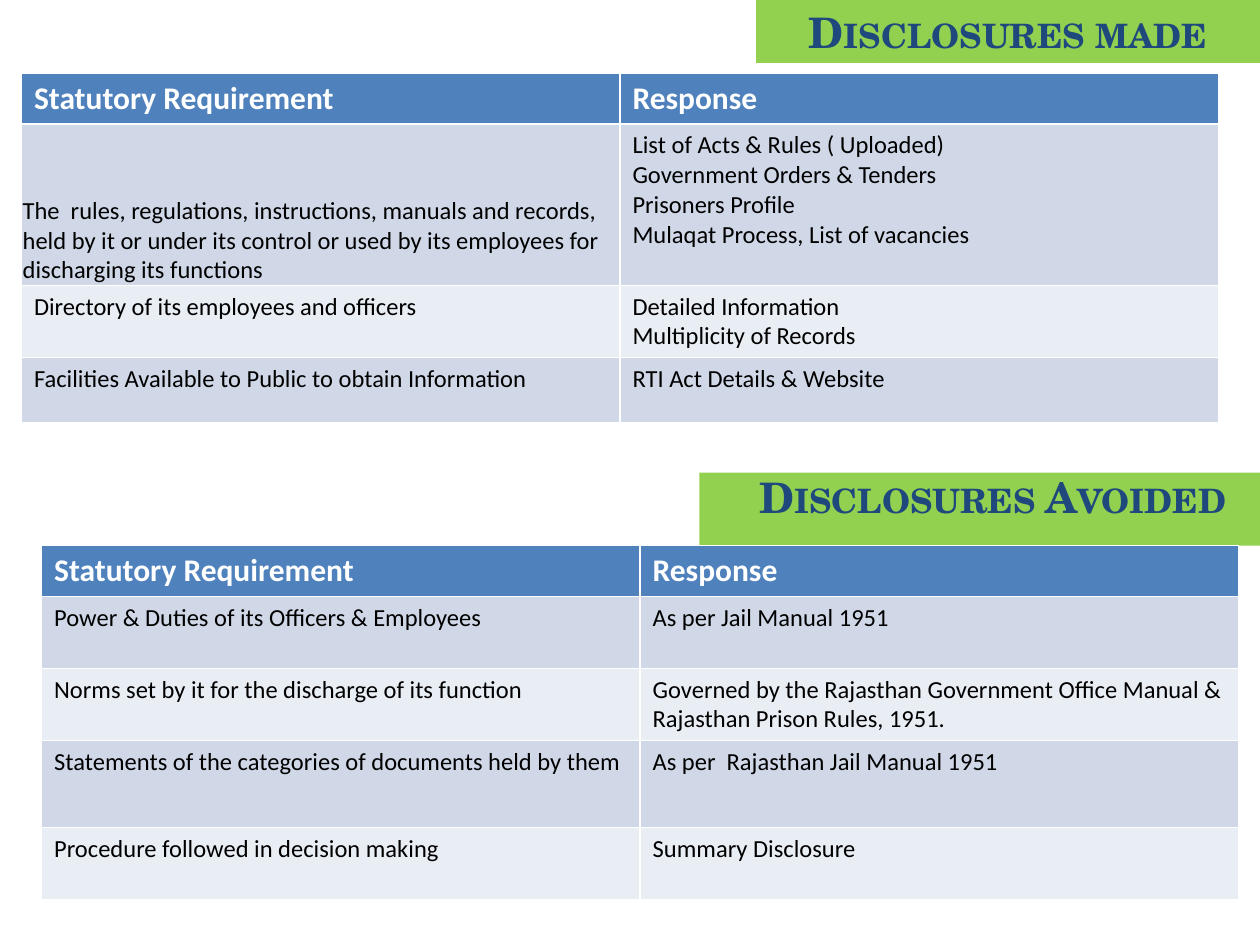
from pptx import Presentation
from pptx.dml.color import RGBColor
from pptx.enum.shapes import MSO_SHAPE
from pptx.enum.text import MSO_ANCHOR, PP_ALIGN
from pptx.oxml.ns import qn
from pptx.util import Inches, Pt

RECTANGLE = MSO_SHAPE.RECTANGLE
MIDDLE, BOTTOM = MSO_ANCHOR.MIDDLE, MSO_ANCHOR.BOTTOM
CENTER = PP_ALIGN.CENTER

GREEN = RGBColor(0x92, 0xD0, 0x50)
NAVY = RGBColor(0x1F, 0x49, 0x7D)
BLUE = RGBColor(0x4F, 0x81, 0xBD)
WHITE = RGBColor(0xFF, 0xFF, 0xFF)
BLACK = RGBColor(0x00, 0x00, 0x00)
BANDS = (RGBColor(0xD0, 0xD8, 0xE8), RGBColor(0xE9, 0xED, 0xF4))

HEADING_FONT, TABLE_FONT = "TeX Gyre Schola", "Calibri"
SLIDE_WIDTH, SLIDE_HEIGHT = 10, 7.5
TABLE_WIDTH = 0.95 * SLIDE_WIDTH
HEADER = ("Statutory Requirement", "Response")

MADE = [
    ("The  rules, regulations, instructions, manuals and records, held by it or "
     "under its control or used by its employees for discharging its functions",
     "List of Acts & Rules ( Uploaded)\nGovernment Orders & Tenders\n"
     "Prisoners Profile\nMulaqat Process, List of vacancies"),
    ("Directory of its employees and officers",
     "Detailed Information\nMultiplicity of Records"),
    ("Facilities Available to Public to obtain Information",
     "RTI Act Details & Website"),
]
AVOIDED = [
    ("Power & Duties of its Officers & Employees", "As per Jail Manual 1951"),
    ("Norms set by it for the discharge of its function",
     "Governed by the Rajasthan Government Office Manual & "
     "Rajasthan Prison Rules, 1951."),
    ("Statements of the categories of documents held by them",
     "As per  Rajasthan Jail Manual 1951"),
    ("Procedure followed in decision making", "Summary Disclosure"),
]


def style_font(paragraph, name, size, color, bold):
    font = paragraph.font
    font.name, font.size, font.bold = name, Pt(size), bold
    font.color.rgb = color


def format_banner(banner, text, left, top, height):
    banner.left, banner.top = Inches(left), Inches(top)
    banner.width, banner.height = Inches(SLIDE_WIDTH - left), Inches(height)
    banner.fill.solid()
    banner.fill.fore_color.rgb = GREEN
    banner.line.fill.background()
    frame = banner.text_frame
    frame.text = text
    frame.word_wrap = True
    frame.vertical_anchor = MIDDLE
    heading = frame.paragraphs[0]
    heading.alignment = CENTER
    style_font(heading, HEADING_FONT, 24, NAVY, True)
    heading._p.pPr.find(qn("a:defRPr")).set("cap", "small")


def add_disclosures(slide, records, left, top, heights):
    rows = [HEADER] + records
    table = slide.shapes.add_table(
        len(rows), len(HEADER), Inches(left), Inches(top),
        Inches(TABLE_WIDTH), Inches(sum(heights))).table
    for r, (texts, height) in enumerate(zip(rows, heights)):
        table.rows[r].height = Inches(height)
        fill = BANDS[(r - 1) % 2] if r else BLUE
        size, color = (14, BLACK) if r else (18, WHITE)
        for c, text in enumerate(texts):
            cell = table.cell(r, c)
            cell.text = text
            cell.fill.solid()
            cell.fill.fore_color.rgb = fill
            for paragraph in cell.text_frame.paragraphs:
                style_font(paragraph, TABLE_FONT, size, color, r == 0)
    return table


def main():
    prs = Presentation()
    prs.slide_width, prs.slide_height = Inches(SLIDE_WIDTH), Inches(SLIDE_HEIGHT)
    slide = prs.slides.add_slide(prs.slide_layouts[5])

    format_banner(slide.shapes.title, "Disclosures made", 6, 0, 0.5)
    made = add_disclosures(slide, MADE, 0.17, 0.58, (0.4, 1.28, 0.57, 0.52))
    rules = made.cell(1, 0)
    rules.vertical_anchor = BOTTOM
    rules.margin_left = rules.margin_right = rules.margin_top = Inches(0.01)
    rules.margin_bottom = 0

    avoided = slide.shapes.add_shape(RECTANGLE, 0, 0, 0, 0)
    avoided.shadow.inherit = False
    format_banner(avoided, "Disclosures Avoided", 5.55, 3.75, 0.58)
    avoided.text_frame.margin_left = Inches(0.31)
    avoided.text_frame.margin_top = 0
    avoided.text_frame.margin_bottom = Inches(0.2)
    add_disclosures(slide, AVOIDED, 0.33, 4.33, (0.4, 0.57, 0.57, 0.69, 0.57))

    prs.save("out.pptx")


if __name__ == "__main__":
    main()
